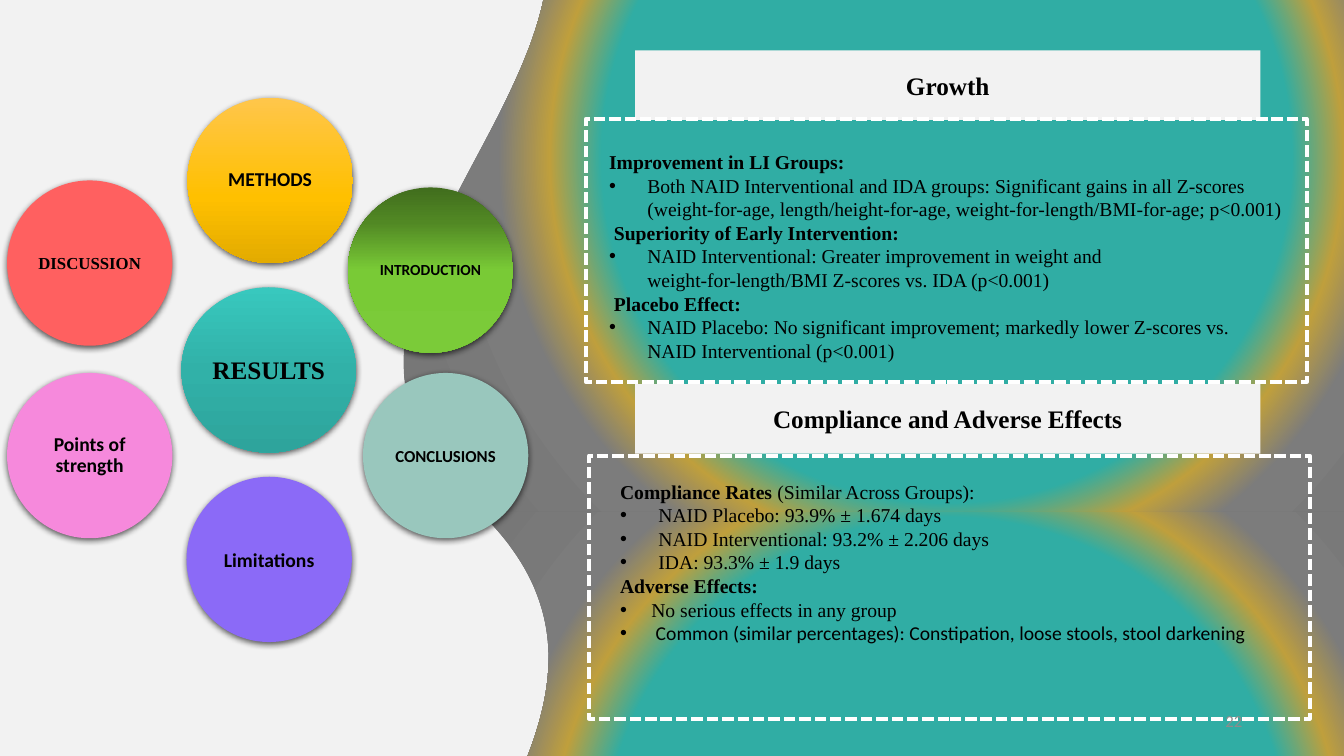
from lxml import etree
from pptx import Presentation, util as u
from pptx.dml import color
from pptx.enum import dml, shapes, text
from pptx.oxml import ns

IN = u.Inches
SERIF, SANS = "Times New Roman", "Calibri"
BLACK, PALE = "000000", "F2F2F2"
WAVE = [(53, "30ADA4"), (61, "BF9F3D"), (69, "7C7C7C"), (97, "747474")]
GOLD = [(0, "FFC64B"), (60, "FFC000"), (100, "E3AB00")]
GREEN = [(0, "416D1D"), (21, "518824"), (50, "79CA36"), (100, "7BCB39")]
TEAL = [(0, "38C8BE"), (50, "31B1A8"), (100, "2EA49C")]

# Left, top, width, label, size, font, fill, inset, line spacing
DISCS = [
    (0.07, 1.79, 1.64, "DISCUSSION", 12, SERIF, "FF6060", 0.05, 1.0),
    (1.86, 0.97, 1.64, "METHODS", 14, SANS, GOLD, 0.05, 0.9),
    (3.6, 3.7, 1.64, "CONCLUSIONS", 12, SANS, "99C7BD", 0.05, 1.0),
    (1.85, 4.73, 1.64, "Limitations", 14, SANS, "8B6AF7", 0.09, 1.0),
    (0.07, 3.7, 1.64, "Points of strength", 14, SANS, "F689DC", 0.09, 0.9),
    (3.45, 1.86, 1.64, "INTRODUCTION", 11, SANS, GREEN, 0.05, 0.9),
    (1.8, 2.85, 1.73, "RESULTS", 18, SERIF, TEAL, 0.04, 1.0),
]

# Each line: bullet indent, then runs of (words, bold, font)
GROWTH = [
    (0, [("Improvement in LI Groups:", True, SERIF)]),
    (0.38, [("Both NAID Interventional and IDA groups: Significant gains in all "
             "Z-scores (weight-for-age, length/height-for-age, "
             "weight-for-length/BMI-for-age; p<0.001)", False, SERIF)]),
    (0, [(" Superiority of Early Intervention:", True, SERIF)]),
    (0.38, [("NAID Interventional: Greater improvement in weight and "
             "weight-for-length/BMI Z-scores vs. IDA (p<0.001)", False, SERIF)]),
    (0, [(" Placebo Effect:", True, SERIF)]),
    (0.38, [("NAID Placebo: No significant improvement; markedly lower Z-scores "
             "vs. NAID Interventional (p<0.001)", False, SERIF)]),
]
SAFETY = [
    (0, [("Compliance Rates", True, SERIF),
         (" (Similar Across Groups):", False, SERIF)]),
    (0.38, [("NAID Placebo: 93.9% ± 1.674 days", False, SERIF)]),
    (0.38, [("NAID Interventional: 93.2% ± 2.206 days", False, SERIF)]),
    (0.38, [("IDA: 93.3% ± 1.9 days", False, SERIF)]),
    (0, [("Adverse Effects:", True, SERIF)]),
    (0.31, [("No serious effects in any group", False, SERIF)]),
    (0.31, [(" Common (similar percentages): Constipation, loose stools, "
             "stool darkening", False, SANS)]),
]


def rgb(code):
    return color.RGBColor.from_string(code)


def node(top, tag, **attrs):
    return etree.SubElement(top, ns.qn("a:" + tag),
                            {k: str(v) for k, v in attrs.items()})


def paint(shape, fill, round_=False):
    """Fill with one colour or with a list of gradient stops."""
    if isinstance(fill, str):
        shape.fill.solid()
        shape.fill.fore_color.rgb = rgb(fill)
        return
    shape.fill.gradient()
    grad = shape.element.spPr.find(ns.qn("a:gradFill"))
    for kid in list(grad):
        grad.remove(kid)
    stops = node(grad, "gsLst")
    for pos, code in fill:
        node(node(stops, "gs", pos=pos * 1000), "srgbClr", val=code)
    if round_:
        mid = dict.fromkeys("ltrb", 50000)
        node(node(grad, "path", path="circle"), "fillToRect", **mid)
    else:
        node(grad, "lin", ang=5400000, scaled=0)


def draw(slide, kind, box, fill=None, round_=False):
    shape = slide.shapes.add_shape(kind, *map(IN, box))
    shape.shadow.inherit = False
    shape.line.fill.background()
    if fill:
        paint(shape, fill, round_)
    else:
        shape.fill.background()
    return shape


def write(para, words, size, font, bold=False, ink=BLACK):
    run = para.add_run()
    run.text = words
    run.font.size, run.font.name, run.font.bold = u.Pt(size), font, bold
    run.font.color.rgb = rgb(ink)


def place(holder, box):
    """Move a placeholder to its box and in front of what is drawn so far."""
    holder.left, holder.top, holder.width, holder.height = map(IN, box)
    holder.element.getparent().append(holder.element)
    return holder.text_frame


def waves(slide, left, tops, wide, high):
    for top in tops:
        wave = draw(slide, shapes.MSO_SHAPE.WAVE, (left, top, wide, high), WAVE, True)
        wave.rotation = 270
        wave.adjustments[0], wave.adjustments[1] = 0.069, 0


def disc(slide, left, top, wide, label, size, font, fill, inset, gap):
    shape = draw(slide, shapes.MSO_SHAPE.OVAL, (left, top, wide, 1.64), fill)
    glow = node(shape.element.spPr.find(ns.qn("a:effectLst")), "outerShdw",
                blurRad=u.Pt(4.5), dist=u.Pt(1.5), dir=5400000, rotWithShape=0)
    node(node(glow, "srgbClr", val=BLACK), "alpha", val=63000)
    frame = shape.text_frame
    frame.word_wrap = True
    frame.vertical_anchor = text.MSO_ANCHOR.MIDDLE
    frame.margin_left = frame.margin_right = IN(inset)
    frame.margin_top = frame.margin_bottom = IN(inset)
    para = frame.paragraphs[0]
    para.alignment = text.PP_ALIGN.CENTER
    para.line_spacing = gap
    write(para, label, size, font, True)


def head(holder, box, words):
    frame = place(holder, box)
    paint(holder, PALE)
    frame.auto_size = text.MSO_AUTO_SIZE.NONE
    frame.vertical_anchor = text.MSO_ANCHOR.MIDDLE
    para = frame.paragraphs[0]
    para.alignment = text.PP_ALIGN.CENTER
    para.space_before = u.Pt(0)
    write(para, words, 18, SERIF, True)


def points(holder, box, lines):
    frame = place(holder, box)
    frame.auto_size = text.MSO_AUTO_SIZE.SHAPE_TO_FIT_TEXT
    frame.vertical_anchor = text.MSO_ANCHOR.TOP
    for i, (dent, runs) in enumerate(lines):
        para = frame.add_paragraph() if i else frame.paragraphs[0]
        para.space_before = u.Pt(0)
        props = para._p.get_or_add_pPr()
        props.set("marL", str(IN(dent)))
        props.set("indent", str(-IN(dent)))
        if dent:
            node(props, "buFont", typeface="Arial")
            node(props, "buChar", char="•")
        else:
            node(props, "buNone")
        for words, bold, font in runs:
            write(para, words, 14, font, bold)


def panel(slide, title, body, box, bar, area, words, lines):
    """Heading bar, dashed frame and list of one result."""
    head(title, (6.3, bar, 6.2, 0.69), words)
    rim = draw(slide, shapes.MSO_SHAPE.RECTANGLE, box)
    rim.line.color.rgb = rgb("FFFFFF")
    rim.line.width = u.Pt(2.75)
    rim.line.dash_style = dml.MSO_LINE.SQUARE_DOT
    points(body, area, lines)


def number(slide, box, words):
    frame = slide.shapes.add_textbox(*map(IN, box)).text_frame
    frame.word_wrap = True
    frame.vertical_anchor = text.MSO_ANCHOR.MIDDLE
    frame.paragraphs[0].alignment = text.PP_ALIGN.RIGHT
    write(frame.paragraphs[0], words, 12, SANS, ink="8C8C8C")


def main():
    deck = Presentation()
    deck.slide_width, deck.slide_height = IN(13.33), IN(7.5)
    slide = deck.slides.add_slide(deck.slide_layouts.get_by_name("Comparison"))
    slide.background.fill.solid()
    slide.background.fill.fore_color.rgb = rgb(PALE)
    slot = {h.placeholder_format.idx: h for h in slide.placeholders}
    spare = slot[1].element
    spare.getparent().remove(spare)

    # Backdrop and topic discs
    waves(slide, 5.88, (3.14, -3.85), 7.02, 10.83)
    for item in DISCS:
        disc(slide, *item)

    # Result panels
    panel(slide, slot[0], slot[2], (5.81, 1.18, 7.15, 2.61), 0.5,
          (5.94, 1.44, 6.89, 2.22), "Growth", GROWTH)
    panel(slide, slot[3], slot[4], (5.84, 4.52, 7.15, 2.61), 3.81,
          (6.05, 4.71, 6.78, 1.75), "Compliance and Adverse Effects", SAFETY)

    # Page number
    number(slide, (9.42, 6.95, 3, 0.4), "22")
    deck.save("out.pptx")


if __name__ == "__main__":
    main()
